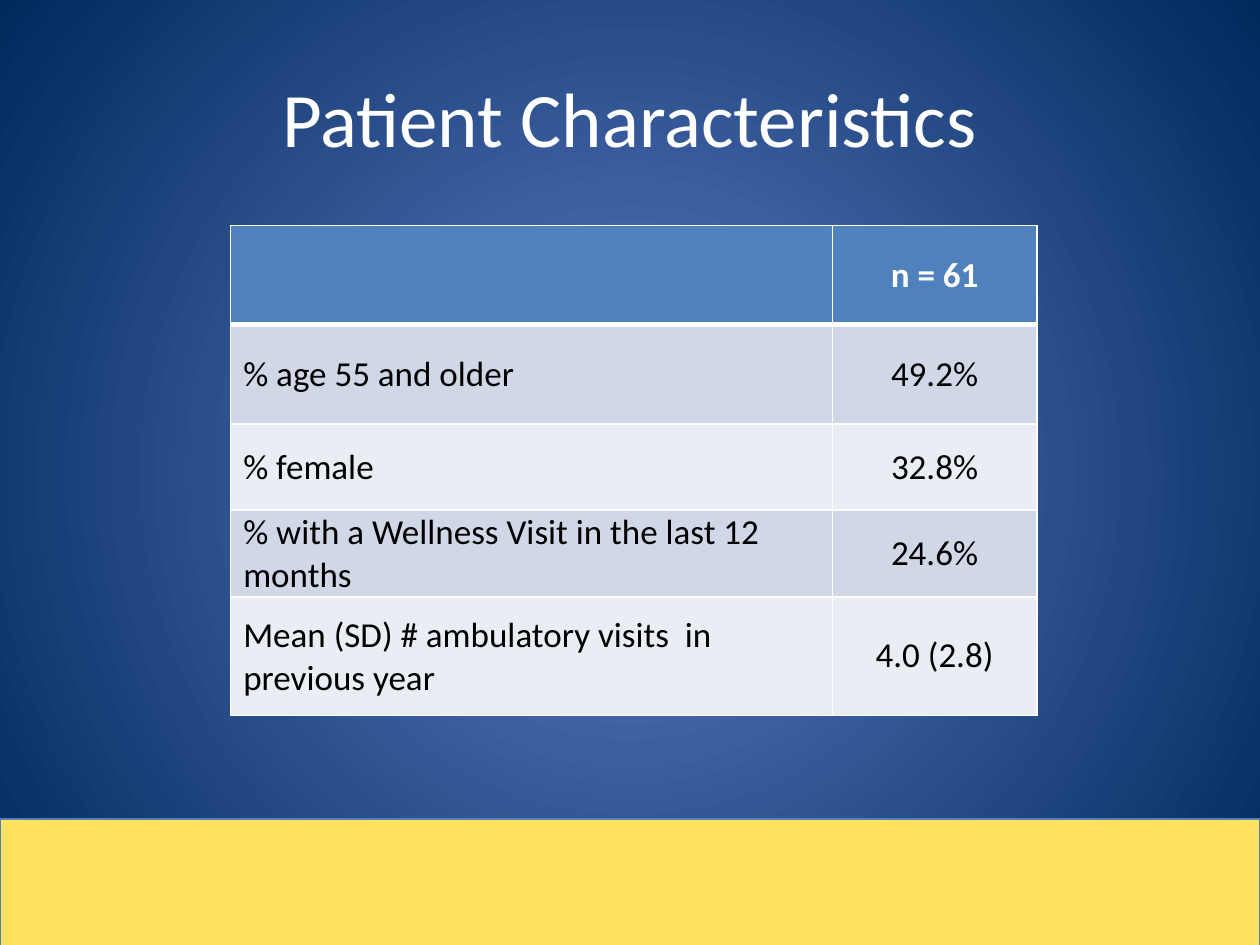
import pptx
import pptx.dml.color
import pptx.enum.shapes
import pptx.enum.text
import pptx.oxml
import pptx.oxml.ns
import pptx.util

Pt = pptx.util.Pt
RGBColor = pptx.dml.color.RGBColor
ALIGN = pptx.enum.text.PP_ALIGN
MIDDLE = pptx.enum.text.MSO_ANCHOR.MIDDLE

WHITE = RGBColor(0xFF, 0xFF, 0xFF)
BLACK = RGBColor(0, 0, 0)
GLOW = RGBColor(0x5E, 0x7C, 0xC5)
NAVY = RGBColor(0x00, 0x29, 0x5C)
YELLOW = RGBColor(0xFF, 0xE2, 0x60)
BLUE = RGBColor(0x4F, 0x81, 0xBD)
BANDS = (RGBColor(0xE9, 0xED, 0xF4), RGBColor(0xD0, 0xD8, 0xE8))

ROWS = (
    ("", "n = 61"),
    ("% age 55 and older", "49.2%"),
    ("% female", "32.8%"),
    ("% with a Wellness Visit in the last 12 months", "24.6%"),
    ("Mean (SD) # ambulatory visits  in previous year", "4.0 (2.8)"),
)
ROW_HEIGHTS = (56.8, 56.8, 49, 49.7, 67.7)
COLUMN_WIDTHS = (343.8, 117)
TIGHT_CELLS = {(2, 0), (2, 1), (3, 0), (3, 1), (4, 0)}


class SlidePainter:
    """Draws styled elements on the current slide, with lengths in points."""

    font_name = "Calibri"

    def __init__(self, page):
        self.page = page

    def background(self, inner, outer):
        fill = self.page.background.fill
        fill.gradient()
        for stop, color, position in zip(fill.gradient_stops, (inner, outer), (0, 1)):
            stop.color.rgb = color
            stop.position = position
        linear = self.page.element.find(".//" + pptx.oxml.ns.qn("a:lin"))
        linear.getparent().replace(linear, pptx.oxml.parse_xml(
            f'<a:path {pptx.oxml.ns.nsdecls("a")} path="circle">'
            '<a:fillToRect l="50000" t="50000" r="50000" b="50000"/></a:path>'))

    def band(self, left, top, width, height, fill, line):
        shape = self.page.shapes.add_shape(
            pptx.enum.shapes.MSO_SHAPE.RECTANGLE, Pt(left), Pt(top), Pt(width), Pt(height))
        shape.shadow.inherit = False
        shape.fill.solid()
        shape.fill.fore_color.rgb = fill
        shape.line.color.rgb = line
        shape.line.width = Pt(0.75)

    def style(self, para, size, color, align, bold=False):
        para.alignment = align
        para.font.name = self.font_name
        para.font.size = Pt(size)
        para.font.bold = bold
        para.font.color.rgb = color

    def title(self, left, top, width, height, text):
        box = self.page.shapes.add_textbox(Pt(left), Pt(top), Pt(width), Pt(height))
        frame = box.text_frame
        frame.word_wrap = True
        frame.vertical_anchor = MIDDLE
        frame.text = text
        self.style(frame.paragraphs[0], 44, WHITE, ALIGN.CENTER)

    def borders(self, cell, top, bottom):
        properties = cell._tc.get_or_add_tcPr()
        for side, width in (("L", 1), ("R", 1), ("T", top), ("B", bottom)):
            properties.append(pptx.oxml.parse_xml(
                f'<a:ln{side} {pptx.oxml.ns.nsdecls("a")} w="{Pt(width)}">'
                f'<a:solidFill><a:srgbClr val="{WHITE}"/></a:solidFill></a:ln{side}>'))

    def table(self, left, top, rows, widths, heights, tight_cells):
        table = self.page.shapes.add_table(
            len(rows), len(widths), Pt(left), Pt(top), Pt(sum(widths)), Pt(sum(heights))).table
        for column, width in zip(table.columns, widths):
            column.width = Pt(width)
        for row, height in zip(table.rows, heights):
            row.height = Pt(height)
        for row, texts in enumerate(rows):
            header = row == 0
            for column, text in enumerate(texts):
                cell = table.cell(row, column)
                cell.text = text
                cell.vertical_anchor = MIDDLE
                if (row, column) in tight_cells:
                    cell.margin_left = Pt(0.7 if column else 7.2)
                    cell.margin_top = cell.margin_right = Pt(0.7)
                    cell.margin_bottom = 0
                self.borders(cell, 3 if row == 1 else 1, 3 if header else 1)
                cell.fill.solid()
                cell.fill.fore_color.rgb = BLUE if header else BANDS[row % 2]
                self.style(cell.text_frame.paragraphs[0], 20, WHITE if header else BLACK,
                           ALIGN.CENTER if column else ALIGN.LEFT, header)


def main():
    deck = pptx.Presentation()
    deck.slide_width, deck.slide_height = Pt(720), Pt(540)
    painter = SlidePainter(deck.slides.add_slide(deck.slide_layouts[6]))
    painter.background(GLOW, NAVY)
    painter.band(0, 468, 720, 72.7, YELLOW, BLUE)
    painter.title(36, 21.6, 648, 90, "Patient Characteristics")
    painter.table(131.8, 128.8, ROWS, COLUMN_WIDTHS, ROW_HEIGHTS, TIGHT_CELLS)
    deck.save("out.pptx")


if __name__ == "__main__":
    main()
